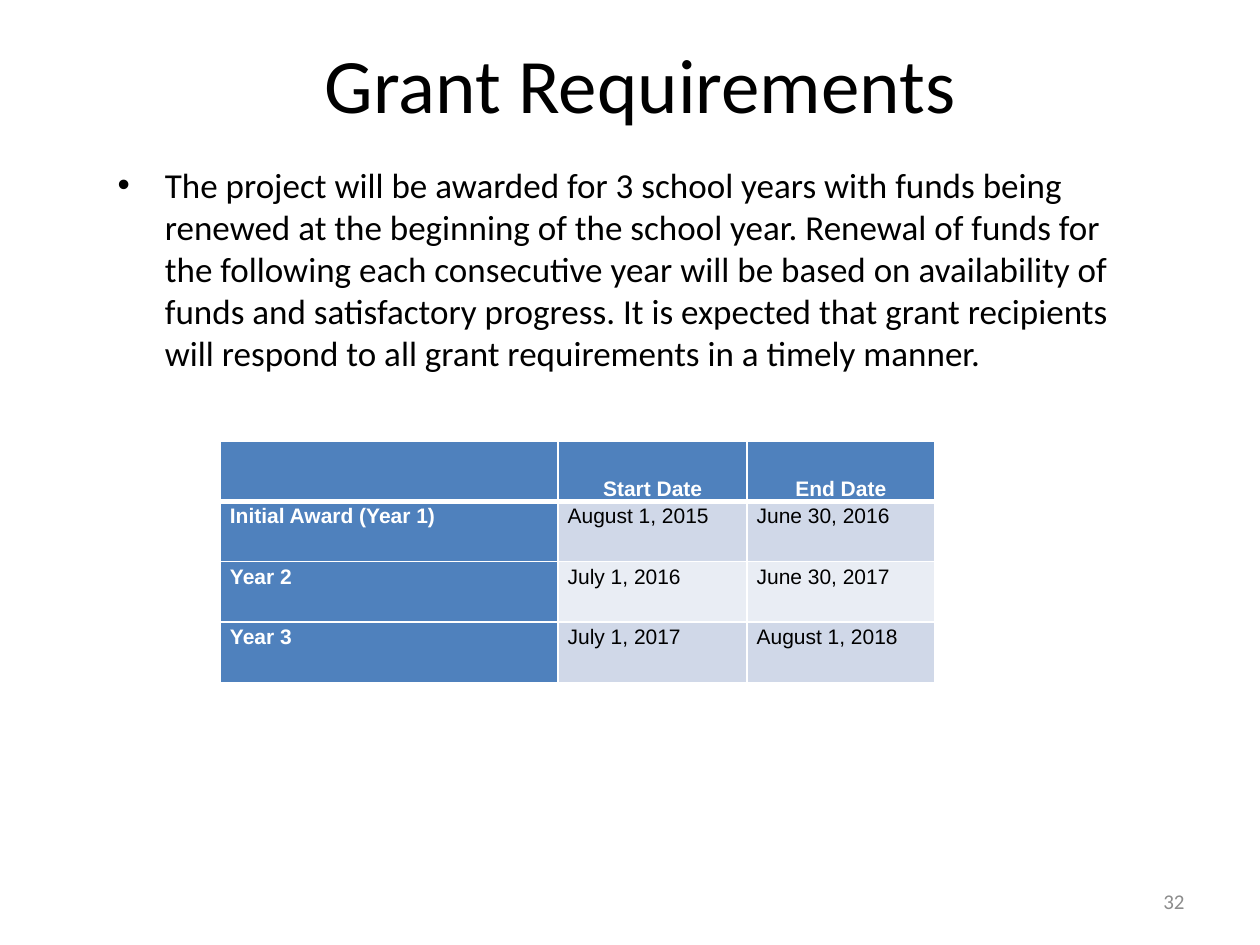
from lxml.etree import SubElement
from pptx import Presentation
from pptx.dml.color import RGBColor
from pptx.enum.text import MSO_ANCHOR, MSO_AUTO_SIZE, PP_ALIGN
from pptx.oxml.ns import qn
from pptx.util import Pt

COLORS = {
    "text": "000000",
    "white": "FFFFFF",
    "header": "4F81BD",
    "odd_row": "D0D8E8",
    "even_row": "E9EDF4",
    "number": "8C8C8C",
}
BODY_TEXT = (
    "The project will be awarded for 3 school years with funds being renewed at the "
    "beginning of the school year. Renewal of funds for the following each consecutive "
    "year will be based on availability of funds and satisfactory progress. It is "
    "expected that grant recipients will respond to all grant requirements in a timely "
    "manner."
)
AWARD_ROWS = [
    ["", "Start Date", "End Date"],
    ["Initial Award (Year 1)", "August 1, 2015", "June 30, 2016"],
    ["Year 2", "July 1, 2016", "June 30, 2017"],
    ["Year 3", "July 1, 2017", "August 1, 2018"],
]
COLUMN_WIDTHS = [193, 108, 107]
ROW_HEIGHT = 34.5


def color(name):
    return RGBColor.from_string(COLORS[name])


def format_paragraph(paragraph, size, color_name, font="Calibri", bold=False, align=None):
    paragraph.font.name = font
    paragraph.font.size = Pt(size)
    paragraph.font.bold = bold
    paragraph.font.color.rgb = color(color_name)
    paragraph.alignment = align


def place(shape, left, top, width, height):
    shape.left, shape.top = Pt(left), Pt(top)
    shape.width, shape.height = Pt(width), Pt(height)


def fill_text(shape, text, anchor, size, color_name, align):
    frame = shape.text_frame
    frame.text = text
    frame.word_wrap = True
    frame.auto_size = MSO_AUTO_SIZE.NONE
    frame.vertical_anchor = anchor
    format_paragraph(frame.paragraphs[0], size, color_name, align=align)


def set_borders(cell, bottom_width):
    properties = cell._tc.get_or_add_tcPr()
    widths = {"a:lnL": 1, "a:lnR": 1, "a:lnT": 1, "a:lnB": bottom_width}
    for position, (tag, width) in enumerate(widths.items()):
        line = SubElement(properties, qn(tag), w=str(Pt(width)))
        fill = SubElement(line, qn("a:solidFill"))
        SubElement(fill, qn("a:srgbClr"), val=COLORS["white"])
        properties.insert(position, line)  # borders come before the fill


def format_cell(cell, text, row, column):
    is_header = row == 0
    is_label = is_header or column == 0
    cell.text = text
    cell.margin_left = cell.margin_right = Pt(5.4)
    cell.margin_top = cell.margin_bottom = 0
    cell.vertical_anchor = MSO_ANCHOR.BOTTOM if is_header else MSO_ANCHOR.TOP
    cell.fill.solid()
    band = "odd_row" if row % 2 else "even_row"
    cell.fill.fore_color.rgb = color("header" if is_label else band)
    # The row below the header shares the header's thick line
    set_borders(cell, bottom_width=3 if is_header else 1)
    if row == 1:
        cell._tc.tcPr.find(qn("a:lnT")).set("w", str(Pt(3)))

    paragraph = cell.text_frame.paragraphs[0]
    paragraph.line_spacing = 1.15
    paragraph.space_after = Pt(10)
    format_paragraph(paragraph, 12, "white" if is_label else "text", "Arial", is_label,
                     PP_ALIGN.CENTER if is_header else PP_ALIGN.LEFT)


def add_award_table(slide, left, top):
    frame = slide.shapes.add_table(
        len(AWARD_ROWS), len(COLUMN_WIDTHS), Pt(left), Pt(top),
        Pt(sum(COLUMN_WIDTHS)), Pt(ROW_HEIGHT * len(AWARD_ROWS)))
    table = frame.table
    table.first_col = True
    for column, width in zip(table.columns, COLUMN_WIDTHS):
        column.width = Pt(width)
    for row, texts in enumerate(AWARD_ROWS):
        table.rows[row].height = Pt(ROW_HEIGHT)
        for column, text in enumerate(texts):
            format_cell(table.cell(row, column), text, row, column)


def main():
    presentation = Presentation()
    presentation.slide_width, presentation.slide_height = Pt(720), Pt(540)
    slide = presentation.slides.add_slide(presentation.slide_layouts[1])

    # Title
    title = slide.shapes.title
    place(title, 72, 2, 588, 90)
    fill_text(title, "Grant Requirements", MSO_ANCHOR.MIDDLE, 44, "text", PP_ALIGN.CENTER)

    # Bulleted requirement
    body = slide.placeholders[1]
    place(body, 60, 90, 588, 400)
    fill_text(body, BODY_TEXT, MSO_ANCHOR.TOP, 20, "text", PP_ALIGN.LEFT)

    # Award periods
    add_award_table(slide, 126, 252)

    # Slide number
    number = slide.shapes.add_textbox(Pt(516), Pt(500.5), Pt(168), Pt(28.75))
    fill_text(number, "32", MSO_ANCHOR.MIDDLE, 12, "number", PP_ALIGN.RIGHT)

    presentation.save("out.pptx")


if __name__ == "__main__":
    main()
